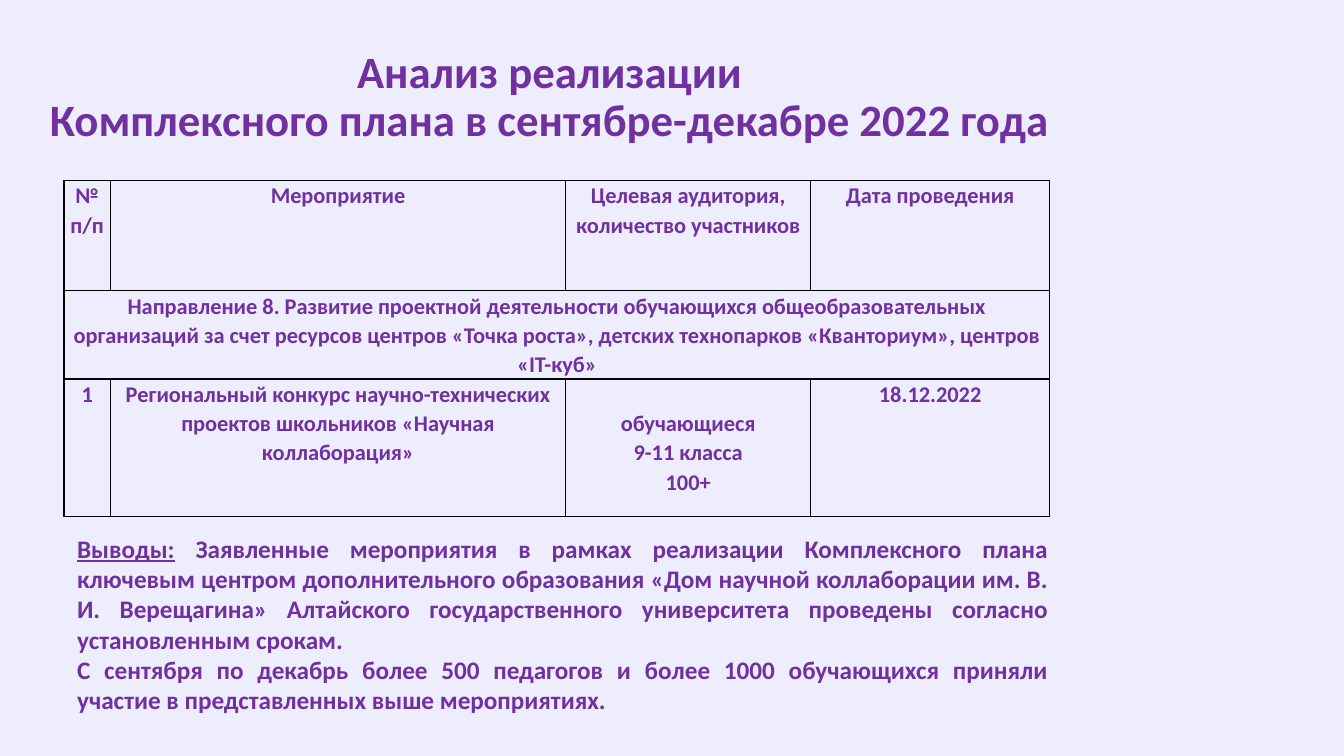
from pptx import Presentation
from pptx.dml.color import RGBColor
from pptx.enum.text import MSO_ANCHOR as Anchor, PP_ALIGN as Align
from pptx.oxml import parse_xml
from pptx.oxml.ns import nsdecls
from pptx.util import Pt

PX = 9525
PURPLE = "7030A0"


def color(code):
    return RGBColor.from_string(code)


def write(frame, paragraphs, size, align, spacing):
    """Fill a frame; each paragraph is a list of (text, underlined) spans."""
    frame.word_wrap = True
    for index, spans in enumerate(paragraphs):
        para = frame.paragraphs[0] if index == 0 else frame.add_paragraph()
        para.alignment = align
        para.line_spacing = spacing
        for text, underlined in spans:
            # A vertical tab in paragraph text becomes a line break.
            for part_index, part in enumerate(text.split("\v")):
                if part_index:
                    para.add_line_break()
                span = para.add_run()
                span.text = part
                style = {"name": "Calibri", "size": Pt(size), "bold": True}
                if underlined:
                    style["underline"] = True
                for name, value in style.items():
                    setattr(span.font, name, value)
                span.font.color.rgb = color(PURPLE)


deck = Presentation()
deck.slide_width, deck.slide_height = 1280 * PX, 720 * PX
page = deck.slides.add_slide(deck.slide_layouts[6])
page.background.fill.solid()
page.background.fill.fore_color.rgb = color("EEEDFE")

# Title
title = page.shapes.add_textbox(*(n * PX for n in (36, 24, 975, 139))).text_frame
title.vertical_anchor = Anchor.MIDDLE
heading = "Анализ реализации\vКомплексного плана в сентябре-декабре 2022 года"
write(title, [[(heading, False)]], 32, Align.CENTER, 0.9)

# Table of events
column_widths = [44, 434, 233, 228]
row_heights = [105, 84, 131]
rows = [
    ["№ п/п", "Мероприятие", "Целевая аудитория, количество участников", "Дата проведения"],
    ["Направление 8. Развитие проектной деятельности обучающихся общеобразовательных "
     "организаций за счет ресурсов центров «Точка роста», детских технопарков "
     "«Кванториум», центров «IT-куб»", "", "", ""],
    ["1", "Региональный конкурс научно-технических проектов школьников «Научная коллаборация»",
     "обучающиеся\n9-11 класса\n100+", "18.12.2022"],
]
events = page.shapes.add_table(
    len(rows), len(column_widths), 61 * PX, 172 * PX,
    sum(column_widths) * PX, sum(row_heights) * PX).table
events.first_row = events.horz_banding = False
for column, width in zip(events.columns, column_widths):
    column.width = width * PX
for row, height in zip(events.rows, row_heights):
    row.height = height * PX
events.cell(1, 0).merge(events.cell(1, 3))

for row, texts in zip(events.rows, rows):
    for cell, text in zip(row.cells, texts):
        cell.margin_left = cell.margin_right = 6 * PX
        cell.margin_top = cell.margin_bottom = 0
        properties = cell._tc.get_or_add_tcPr()
        for side in ("lnL", "lnR", "lnT", "lnB"):
            properties.append(parse_xml(
                f'<a:{side} {nsdecls("a")} w="{Pt(1)}"><a:solidFill>'
                f'<a:srgbClr val="000000"/></a:solidFill></a:{side}>'))
        cell.fill.background()
        if text:
            lines = [[(line, False)] for line in text.split("\n")]
            write(cell.text_frame, lines, 16, Align.CENTER, 1.07)
events.cell(2, 2).margin_top = 28 * PX

# Conclusions
conclusions = page.shapes.add_textbox(*(n * PX for n in (64, 503, 944, 156))).text_frame
write(conclusions, [
    [("Выводы:", True),
     (" Заявленные мероприятия в рамках реализации Комплексного плана ключевым центром "
      "дополнительного образования «Дом научной коллаборации им. В. И. Верещагина» "
      "Алтайского государственного университета проведены согласно установленным срокам.",
      False)],
    [("С сентября по декабрь более 500 педагогов и более 1000 обучающихся приняли "
      "участие в представленных выше мероприятиях.", False)],
], 18, Align.JUSTIFY, 1.0)

deck.save("out.pptx")
